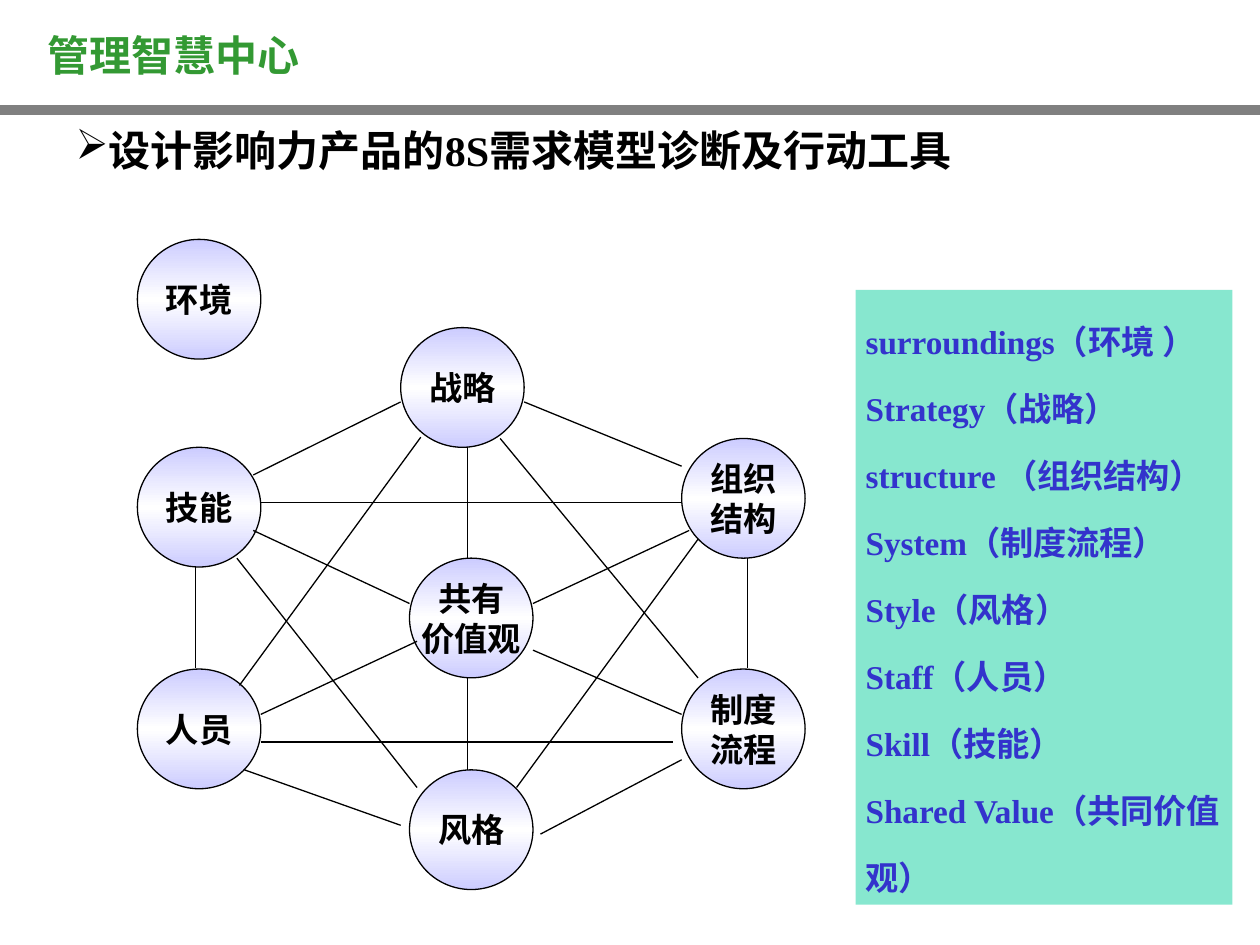
import pptx
import copy
import lxml.etree
import pptx.dml.color
import pptx.enum.dml
import pptx.enum.shapes
import pptx.enum.text
import pptx.oxml.ns
import pptx.util

Inches = pptx.util.Inches
Pt = pptx.util.Pt
RGBColor = pptx.dml.color.RGBColor
Shapes = pptx.enum.shapes.MSO_SHAPE
Anchor = pptx.enum.text.MSO_ANCHOR
Align = pptx.enum.text.PP_ALIGN
qn = pptx.oxml.ns.qn

BLACK = RGBColor(0x00, 0x00, 0x00)
WHITE = RGBColor(0xFF, 0xFF, 0xFF)
GRAY = RGBColor(0x80, 0x80, 0x80)
GREEN = RGBColor(0x33, 0x99, 0x33)
LAVENDER = RGBColor(0xCC, 0xCC, 0xFF)
BLUE = RGBColor(0x33, 0x33, 0xCC)
TEAL = RGBColor(0x00, 0xCC, 0x99)

SERIF = "Times New Roman"
SANS = "Noto Sans CJK SC"
CIRCLE_SIZE = (0.98, 0.95)

CIRCLES = [
    (1.09, 1.9, ["环境"]),
    (3.18, 2.6, ["战略"]),
    (1.09, 3.55, ["技能"]),
    (3.25, 4.43, ["共有", "价值观"]),
    (1.09, 5.31, ["人员"]),
    (3.25, 6.11, ["风格"]),
    (5.41, 3.48, ["组织", "结构"]),
    (5.41, 5.31, ["制度", "流程"]),
]

LINKS = [
    (3.18, 3.19, 2.01, 3.77),
    (1.55, 4.5, 1.55, 5.3),
    (1.94, 6.11, 3.18, 6.55),
    (4.29, 6.62, 5.41, 6.03),
    (5.93, 4.43, 5.93, 5.3),
    (4.16, 3.19, 5.41, 3.7),
    (2.07, 3.99, 5.41, 3.99),
    (2.01, 4.21, 3.25, 4.79),
    (4.23, 5.16, 5.41, 5.67),
    (2.07, 5.67, 3.31, 5.09),
    (4.23, 4.79, 5.47, 4.21),
    (3.71, 3.55, 3.71, 4.43),
    (3.71, 5.38, 3.71, 6.11),
    (1.88, 4.43, 3.31, 6.25),
    (3.34, 3.47, 1.9, 5.44),
    (2.07, 5.89, 5.34, 5.89),
    (5.54, 4.28, 4.1, 6.25),
    (3.97, 3.48, 5.54, 5.38),
]

TERMS = [
    [("surroundings（环境", 19, BLUE, True), (" ", 20, BLACK, False), ("）", 19, BLUE, True)],
    *[[(term, 19, BLUE, True)] for term in (
        "Strategy（战略）",
        "structure （组织结构）",
        "System（制度流程）",
        "Style（风格）",
        "Staff（人员）",
        "Skill（技能）",
        "Shared Value（共同价值观）",
    )],
]


def add_span(para, text, size, color, bold=True, font=SERIF):
    span = para.add_run()
    span.text = text
    span.font.size = Pt(size)
    span.font.bold = bold
    span.font.color.rgb = color
    span.font.name = font
    east_asian = lxml.etree.SubElement(span.font._element, qn("a:ea"))
    east_asian.set("typeface", SANS)


def set_bullet(para, char=None):
    properties = para._p.get_or_add_pPr()
    properties.set("marL", "0")
    properties.set("indent", "0")
    if char:
        lxml.etree.SubElement(properties, qn("a:buChar")).set("char", char)
    else:
        lxml.etree.SubElement(properties, qn("a:buNone"))


def set_frame(frame, left, top, right, bottom, anchor=Anchor.MIDDLE, wrap=True):
    frame.margin_left, frame.margin_top = Inches(left), Inches(top)
    frame.margin_right, frame.margin_bottom = Inches(right), Inches(bottom)
    frame.vertical_anchor = anchor
    frame.word_wrap = wrap
    frame.auto_size = pptx.enum.text.MSO_AUTO_SIZE.NONE


def place(box, left, top, width, height):
    box.left, box.top = Inches(left), Inches(top)
    box.width, box.height = Inches(width), Inches(height)


def get_paragraph(frame, index):
    return frame.add_paragraph() if index else frame.paragraphs[0]


def add_header(page):
    bar = page.shapes.add_shape(
        Shapes.FLOWCHART_PROCESS, Inches(0), Inches(0.83), Inches(10), Inches(0.08))
    bar.shadow.inherit = False
    bar.fill.solid()
    bar.fill.fore_color.rgb = GRAY
    bar.line.fill.background()

    box = page.shapes.add_textbox(Inches(0), Inches(0), Inches(7.75), Inches(0.83))
    set_frame(box.text_frame, 0.38, 0.04, 0, 0)
    add_span(box.text_frame.paragraphs[0], "管理智慧中心", 24, GREEN, font=SANS)


def fill_title(page):
    title = page.shapes.title
    place(title, 0.5, 0.88, 9, 0.61)
    set_frame(title.text_frame, 0.1, 0.05, 0.1, 0.05)
    para = title.text_frame.paragraphs[0]
    set_bullet(para, "➢")
    para.alignment = Align.LEFT
    add_span(para, "设计影响力产品的8S需求模型诊断及行动工具", 24, BLACK)


def add_circle(page, left, top, lines):
    width, height = CIRCLE_SIZE
    circle = page.shapes.add_shape(
        Shapes.OVAL, Inches(left), Inches(top), Inches(width), Inches(height))
    circle.shadow.inherit = False
    circle.fill.gradient()
    circle.fill.gradient_angle = 270
    first = circle._element.spPr.find(".//" + qn("a:gs"))
    first.addnext(copy.deepcopy(first))
    stops = [(0, LAVENDER), (0.5, WHITE), (1, LAVENDER)]
    for stop, (position, color) in zip(circle.fill.gradient_stops, stops):
        stop.position = position
        stop.color.rgb = color
    circle.line.color.rgb = BLACK
    circle.line.width = Pt(0.75)
    set_frame(circle.text_frame, 0.08, 0.04, 0.08, 0.04, wrap=False)
    for index, line in enumerate(lines):
        para = get_paragraph(circle.text_frame, index)
        para.alignment = Align.CENTER
        add_span(para, line, 19, BLACK)


def add_link(page, *ends):
    link = page.shapes.add_connector(
        pptx.enum.shapes.MSO_CONNECTOR.STRAIGHT, *map(Inches, ends))
    link.line.color.rgb = BLACK
    link.line.width = Pt(0.75)
    lxml.etree.SubElement(link._element.spPr, qn("a:effectLst"))


def fill_terms(page):
    panel = page.placeholders[1]
    place(panel, 6.79, 2.3, 2.99, 4.88)
    panel.fill.solid()
    panel.fill.fore_color.rgb = TEAL
    color = panel._element.spPr.find(".//" + qn("a:srgbClr"))
    lxml.etree.SubElement(color, qn("a:alpha")).set("val", "47000")
    set_frame(panel.text_frame, 0.08, 0.04, 0.08, 0.04, anchor=Anchor.TOP)
    for index, spans in enumerate(TERMS):
        para = get_paragraph(panel.text_frame, index)
        set_bullet(para)
        para.line_spacing = Pt(38.2)
        para.space_before = Pt(0)
        for span in spans:
            add_span(para, *span)


def main():
    deck = pptx.Presentation()
    deck.slide_width, deck.slide_height = Inches(10), Inches(7.5)
    page = deck.slides.add_slide(deck.slide_layouts[1])
    add_header(page)
    fill_title(page)
    for circle in CIRCLES:
        add_circle(page, *circle)
    for link in LINKS:
        add_link(page, *link)
    fill_terms(page)
    deck.save("out.pptx")


if __name__ == "__main__":
    main()
